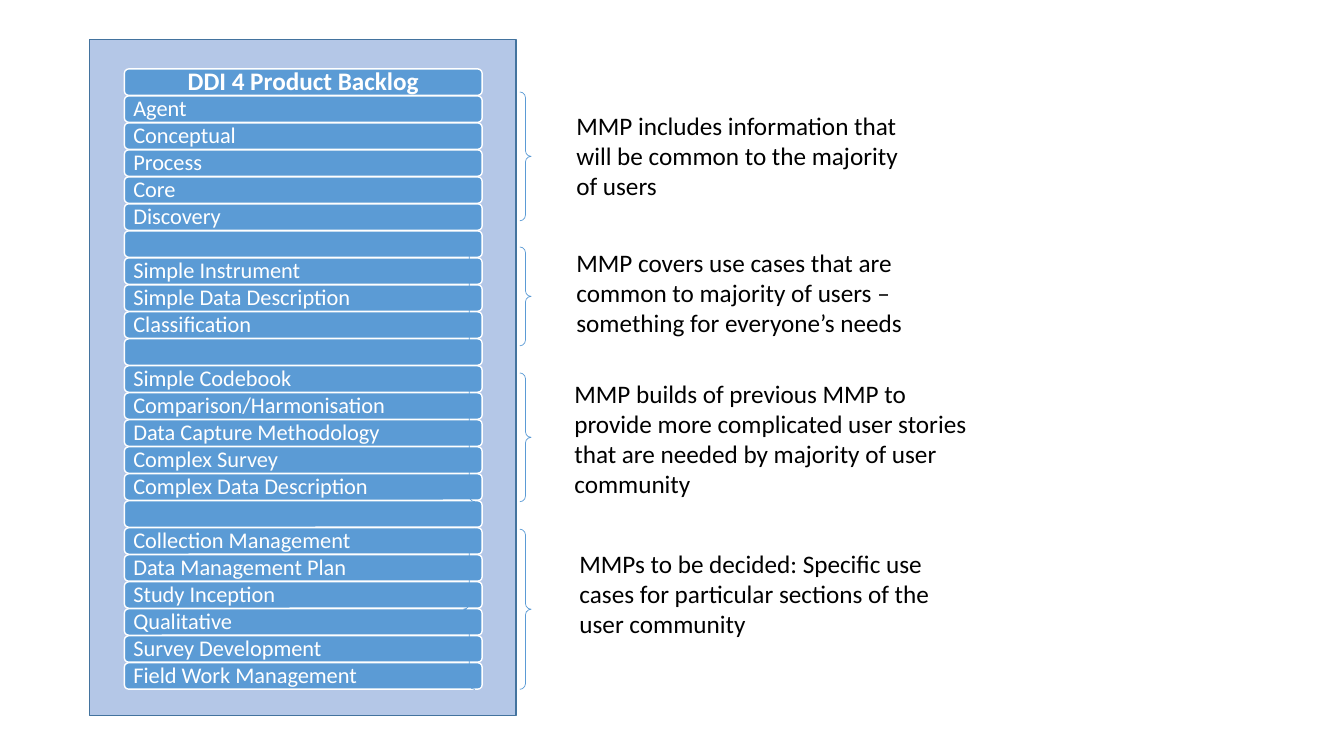
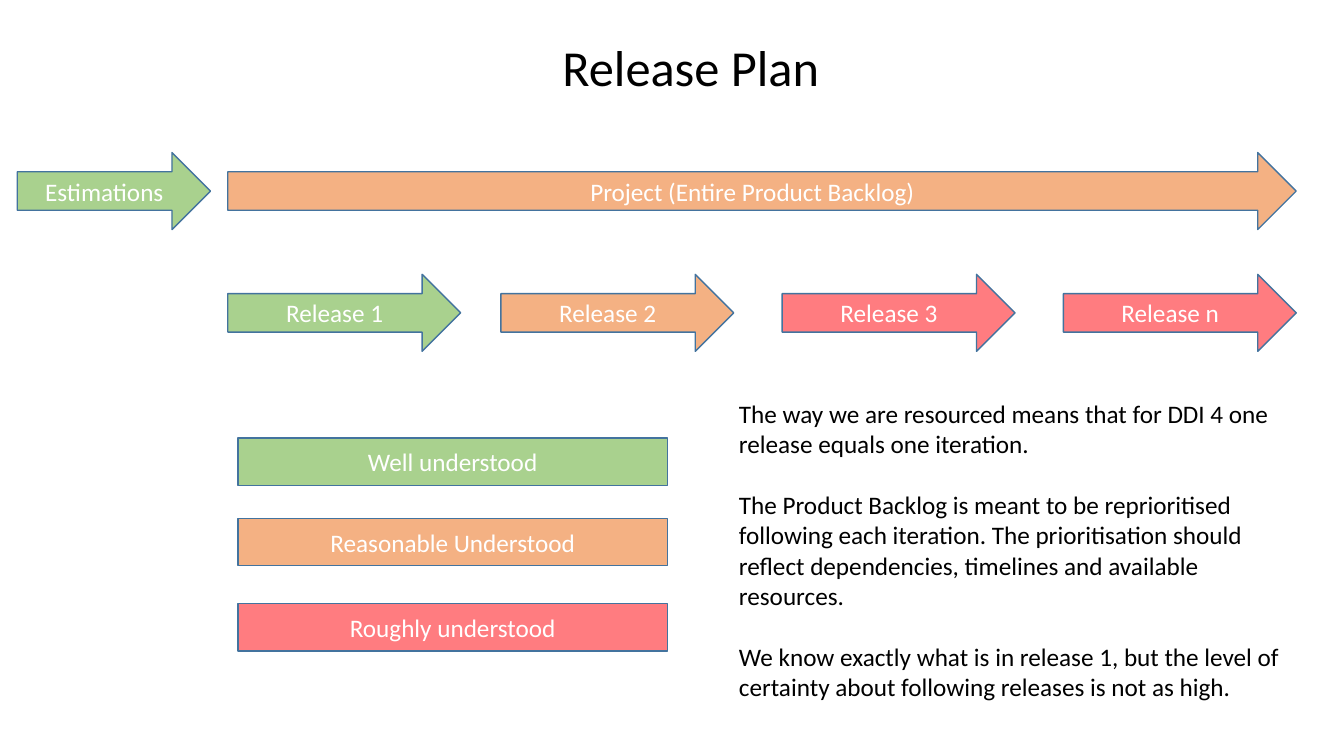
"""Build two slides: the product backlog grouped into MMPs, and the release plan."""
from lxml.etree import SubElement
from pptx import Presentation
from pptx.dml.color import RGBColor
from pptx.enum.shapes import MSO_SHAPE
from pptx.enum.text import MSO_ANCHOR, MSO_AUTO_SIZE, PP_ALIGN
from pptx.oxml.ns import qn
from pptx.util import Pt

COLORS = {
    "text": "000000", "white": "FFFFFF", "bar": "5B9BD5", "panel": "B4C7E7",
    "edge": "43739E", "well": "A9D18E", "reasonable": "F4B183", "rough": "FF7C80",
}
BODY = {"name": "Calibri", "size": Pt(18), "bold": False}
TITLE = BODY | {"size": Pt(36)}
BAR = BODY | {"size": Pt(16)}
BAR_HEAD = BODY | {"bold": True}


def add_outline(slide, kind, box, fill, line, width=1):
    shape = slide.shapes.add_shape(kind, *map(Pt, box))
    shape.shadow.inherit = False
    if fill:
        shape.fill.solid()
        shape.fill.fore_color.rgb = RGBColor.from_string(COLORS[fill])
    else:
        shape.fill.background()
    shape.line.color.rgb = RGBColor.from_string(COLORS[line])
    shape.line.width = Pt(width)
    return shape


def write(frame, texts, font, color="text", align=PP_ALIGN.LEFT, gap=0, spacing=1.0):
    frame.word_wrap = True
    for index, text in enumerate(texts):
        paragraph = frame.add_paragraph() if index else frame.paragraphs[0]
        paragraph.alignment = align
        paragraph.line_spacing = spacing
        paragraph.space_before = Pt(gap if index else 0)
        run = paragraph.add_run()
        run.text = text
        for attribute, value in font.items():
            setattr(run.font, attribute, value)
        run.font.color.rgb = RGBColor.from_string(COLORS[color])


deck = Presentation()
deck.slide_width, deck.slide_height = Pt(960), Pt(540)

backlog = deck.slides.add_slide(deck.slide_layouts[6])
backlog_rows = [
    "DDI 4 Product Backlog",
    "Agent", "Conceptual", "Process", "Core", "Discovery", "",
    "Simple Instrument", "Simple Data Description", "Classification", "",
    "Simple Codebook", "Comparison/Harmonisation", "Data Capture Methodology",
    "Complex Survey", "Complex Data Description", "",
    "Collection Management", "Data Management Plan", "Study Inception",
    "Qualitative", "Survey Development", "Field Work Management",
]
braces = [(331.2, top, 48.2, height)
          for top, height in ((65.7, 92), (176.4, 70.6), (266.4, 92), (378, 114.4))]
brace_style = (MSO_SHAPE.DOUBLE_BRACE, None, "bar", 0.5)
brace_kind, *brace_look = brace_style

add_outline(backlog, brace_kind, braces[0], *brace_look)
add_outline(backlog, MSO_SHAPE.RECTANGLE, (64, 28.3, 304.7, 483), "panel", "edge")
for row, name in enumerate(backlog_rows):
    bar = add_outline(backlog, MSO_SHAPE.ROUNDED_RECTANGLE,
                      (88.8, 49.2 + row * 19.28, 255.6, 18.9), "bar", "white")
    if name:
        frame = bar.text_frame
        frame.vertical_anchor = MSO_ANCHOR.MIDDLE
        frame.margin_top = frame.margin_bottom = 0
        frame.margin_left = frame.margin_right = Pt(5.5)
        write(frame, [name], BAR if row else BAR_HEAD, "white",
              PP_ALIGN.LEFT if row else PP_ALIGN.CENTER, spacing=0.9)
for brace in braces[1:]:
    add_outline(backlog, brace_kind, brace, *brace_look)

mmp_notes = [
    ((404.6, 74.9, 244, 72.7),
     "MMP includes information that will be common to the majority of users"),
    ((404.6, 172.8, 275, 72.7),
     "MMP covers use cases that are common to majority of users – something for everyone’s needs"),
    ((403.2, 266.4, 297.4, 94.5),
     "MMP builds of previous MMP to provide more complicated user stories that are needed "
     "by majority of user community"),
    ((406.8, 388.1, 273, 72.7),
     "MMPs to be decided: Specific use cases for particular sections of the user community"),
]
for box, note in mmp_notes:
    frame = backlog.shapes.add_textbox(*map(Pt, box)).text_frame
    write(frame, [note], BODY)
    frame.auto_size = MSO_AUTO_SIZE.SHAPE_TO_FIT_TEXT

plan = deck.slides.add_slide(deck.slide_layouts[1])
heading, remarks = plan.shapes.title, plan.placeholders[1]
for holder, box in ((heading, (132.5, 21.6, 722, 51)), (remarks, (520.6, 280.8, 401.8, 247))):
    holder.left, holder.top, holder.width, holder.height = map(Pt, box)
    holder.text_frame.auto_size = MSO_AUTO_SIZE.NONE
write(heading.text_frame, ["Release Plan"], TITLE, align=PP_ALIGN.CENTER)
write(remarks.text_frame, [
    "The way we are resourced means that for DDI 4 one release equals one iteration.",
    "The Product Backlog is meant to be reprioritised following each iteration. The "
    "prioritisation should reflect dependencies, timelines and available resources.",
    "We know exactly what is in release 1, but the level of certainty about following "
    "releases is not as high.",
], BODY, gap=22)
for paragraph in remarks.text_frame.paragraphs:
    properties = paragraph._p.get_or_add_pPr()
    properties.set("marL", "0")
    properties.set("indent", "0")
    SubElement(properties, qn("a:buNone"))

arrow, key = MSO_SHAPE.RIGHT_ARROW, MSO_SHAPE.RECTANGLE
plan_steps = [
    (arrow, (12.4, 109, 138, 55), "well", "Estimations"),
    (arrow, (162.7, 109, 763.2, 55), "reasonable", "Project (Entire Product Backlog)"),
]
for left, fill, name in ((162.7, "well", "Release 1"), (357.8, "reasonable", "Release 2"),
                         (558.7, "rough", "Release 3"), (759.6, "rough", "Release n")):
    plan_steps.append((arrow, (left, 196, 166.3, 55), fill, name))
for top, fill, name in ((313, "well", "Well understood"),
                        (370.4, "reasonable", "Reasonable Understood"),
                        (431.3, "rough", "Roughly understood")):
    plan_steps.append((key, (169.9, top, 306.9, 33.8), fill, name))
for kind, box, fill, name in plan_steps:
    step = add_outline(plan, kind, box, fill, "edge")
    step.text_frame.vertical_anchor = MSO_ANCHOR.MIDDLE
    write(step.text_frame, [name], BODY, "white", PP_ALIGN.CENTER)

deck.save("out.pptx")
